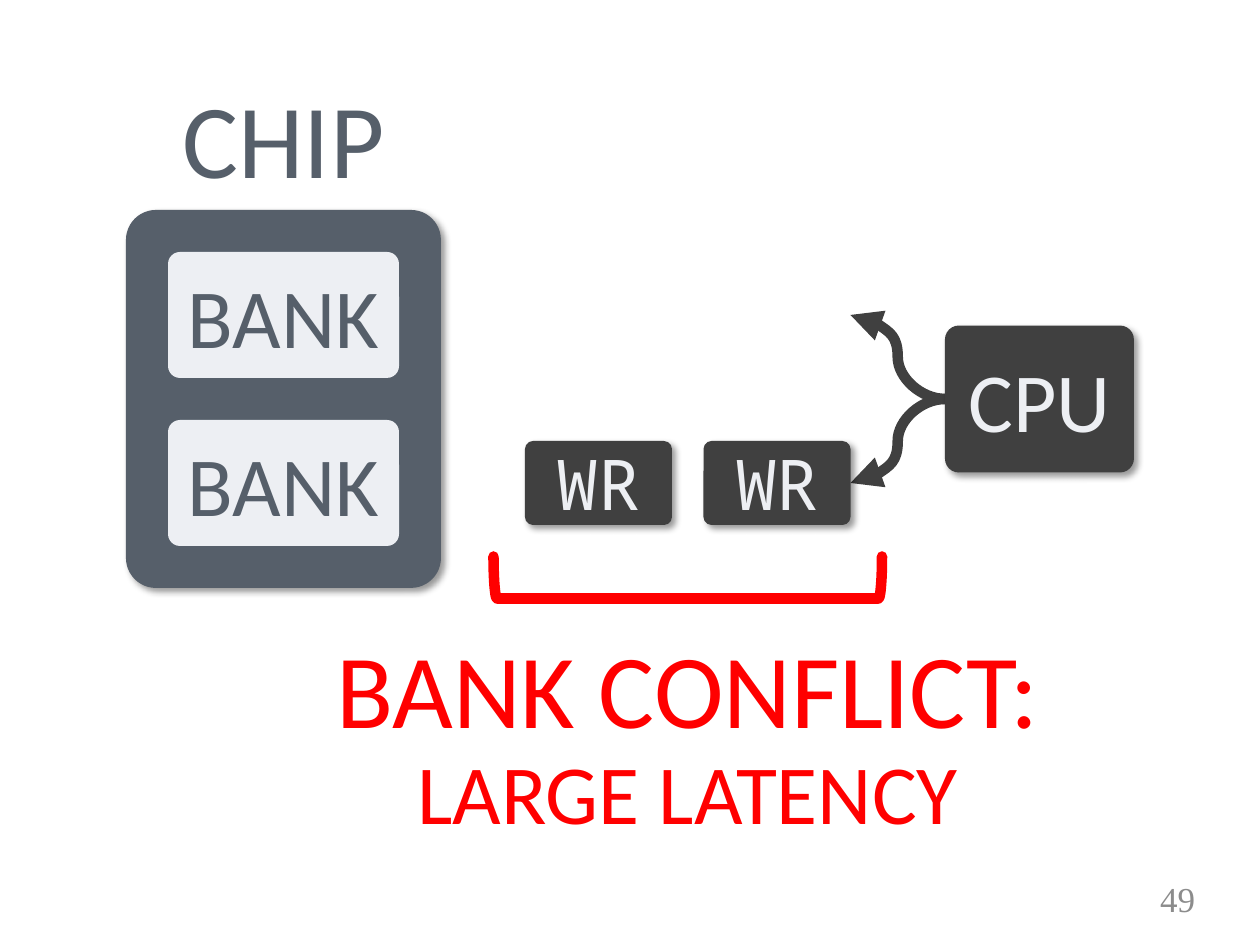
from lxml import etree
from pptx import Presentation
from pptx.dml.color import RGBColor
from pptx.enum.shapes import MSO_CONNECTOR, MSO_SHAPE
from pptx.enum.text import MSO_ANCHOR, PP_ALIGN
from pptx.oxml.ns import qn
from pptx.util import Pt

ROUNDED = MSO_SHAPE.ROUNDED_RECTANGLE
BRACKET = MSO_SHAPE.RIGHT_BRACKET
CURVE = MSO_CONNECTOR.CURVE
MIDDLE = MSO_ANCHOR.MIDDLE
CENTER, RIGHT = PP_ALIGN.CENTER, PP_ALIGN.RIGHT

SLATE, PALE, DARK, RED, GRAY = "565F6A", "EDEFF3", "404040", "FF0000", "8C8C8C"
SANS, MONO, SERIF = "Calibri", "Noto Sans Mono", "Times New Roman"


def color(value):
    return RGBColor.from_string(value)


def points(*lengths):
    return [Pt(length) for length in lengths]


def add_effects(shape):
    return etree.SubElement(shape._element.spPr, qn("a:effectLst"))


def add_shadow(shape):
    """Give the shape a soft shadow towards the lower right."""
    shadow = etree.SubElement(add_effects(shape), qn("a:outerShdw"), blurRad=str(Pt(4)),
                              dist=str(Pt(3)), dir=str(45 * 60000), algn="tl", rotWithShape="0")
    black = etree.SubElement(shadow, qn("a:srgbClr"), val="000000")
    etree.SubElement(black, qn("a:alpha"), val="40000")


def write_lines(frame, lines, align=CENTER, spacing=None):
    """Write one paragraph for each (text, size, font, color) line."""
    frame.word_wrap = True
    frame.vertical_anchor = MIDDLE
    for index, (text, size, font, ink) in enumerate(lines):
        para = frame.paragraphs[0] if index == 0 else frame.add_paragraph()
        para.alignment = align
        para.line_spacing = spacing
        span = para.add_run()
        span.text = text
        for name, value in {"size": Pt(size), "name": font}.items():
            setattr(span.font, name, value)
        span.font.color.rgb = color(ink)


def add_box(page, bounds, fill=None, lines=(), shadow=False, spacing=None):
    box = page.shapes.add_shape(ROUNDED, *points(*bounds))
    box.adjustments[0] = 0.095
    box.line.fill.background()
    if fill:
        box.fill.solid()
        box.fill.fore_color.rgb = color(fill)
    else:
        box.fill.background()
    if shadow:
        add_shadow(box)
    else:
        box.shadow.inherit = False
    for side in ("left", "top", "right", "bottom"):
        setattr(box.text_frame, f"margin_{side}", 0)
    write_lines(box.text_frame, lines, spacing=spacing)


def add_arrow(page, start, end):
    arrow = page.shapes.add_connector(CURVE, *points(*start, *end))
    arrow.line.color.rgb = color(DARK)
    arrow.line.width = Pt(6)
    etree.SubElement(arrow.line._get_or_add_ln(), qn("a:tailEnd"), type="triangle")
    add_effects(arrow)


def add_bracket(page, bounds):
    bracket = page.shapes.add_shape(BRACKET, *points(*bounds))
    bracket.rotation = 90
    bracket.fill.background()
    bracket.line.color.rgb = color(RED)
    bracket.line.width = Pt(6)
    bracket.line._get_or_add_ln().set("cap", "rnd")
    bracket.shadow.inherit = False


def add_page_number(page, bounds, number):
    box = page.shapes.add_textbox(*points(*bounds))
    write_lines(box.text_frame, [(number, 20, SERIF, GRAY)], RIGHT)


def main():
    deck = Presentation()
    deck.slide_width, deck.slide_height = points(720, 540)
    page = deck.slides.add_slide(deck.slide_layouts[6])

    add_page_number(page, (636, 499, 54, 29), "49")

    add_box(page, (72, 120, 180, 216), SLATE, shadow=True)
    add_box(page, (72, 36, 180, 84), lines=[("CHIP", 60, SANS, SLATE)])
    bank_tops = (144, 240)
    for top in bank_tops:
        add_box(page, (96, top, 132, 72), PALE, [("BANK", 48, SANS, SLATE)])

    for top in bank_tops:
        add_arrow(page, (540, 228), (486, top + 36))
    add_box(page, (540, 186, 108, 84), DARK, [("CPU", 48, SANS, PALE)], shadow=True)
    for left in (300, 402):
        add_box(page, (left, 252, 84, 48), DARK, [("WR", 40, MONO, PALE)], shadow=True)

    conflict = [("BANK CONFLICT:", 60, SANS, RED), ("LARGE LATENCY", 48, SANS, RED)]
    add_box(page, (168, 342, 450, 162), lines=conflict, spacing=0.9)
    add_bracket(page, (381, 219, 24, 222))

    deck.save("out.pptx")


if __name__ == "__main__":
    main()
